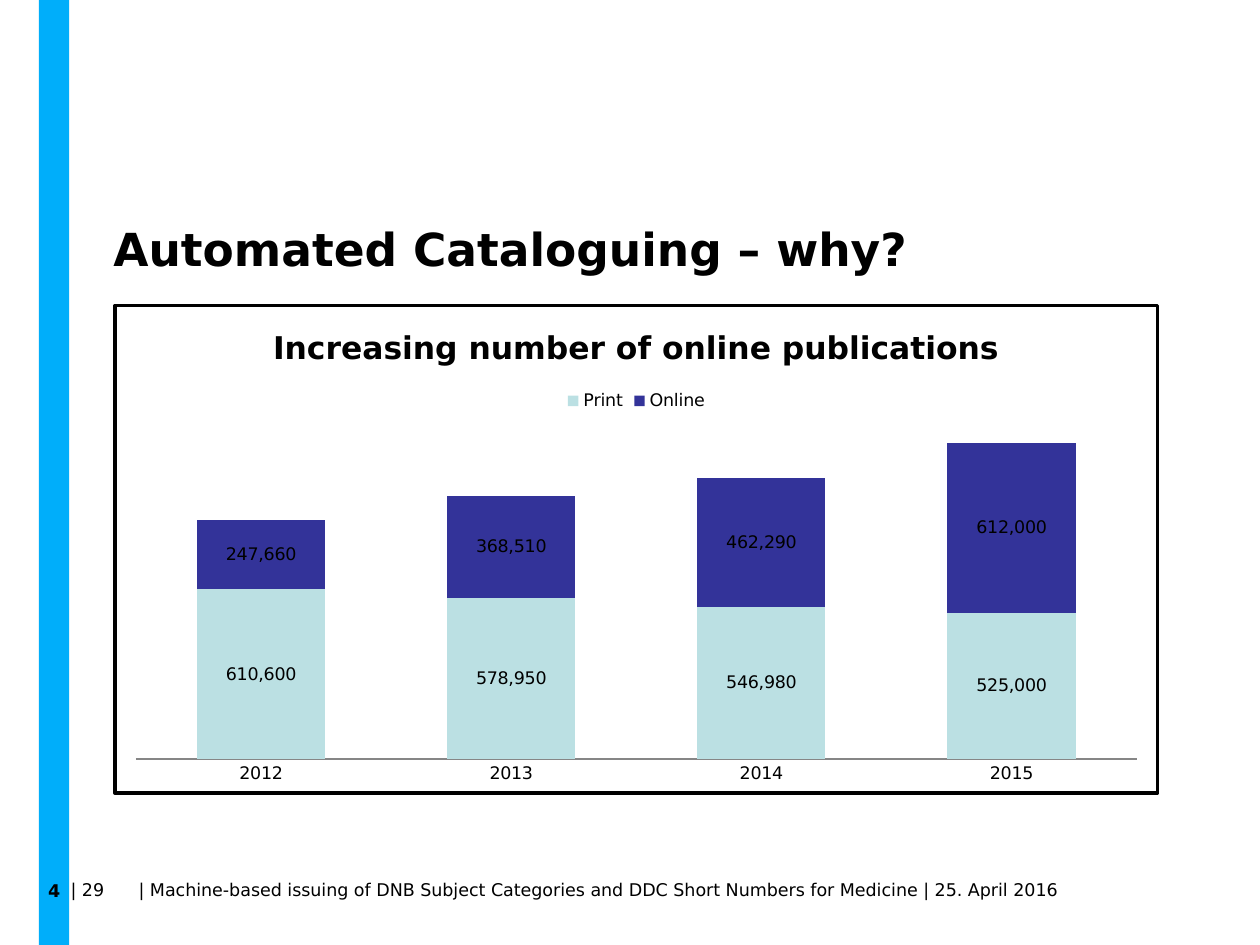
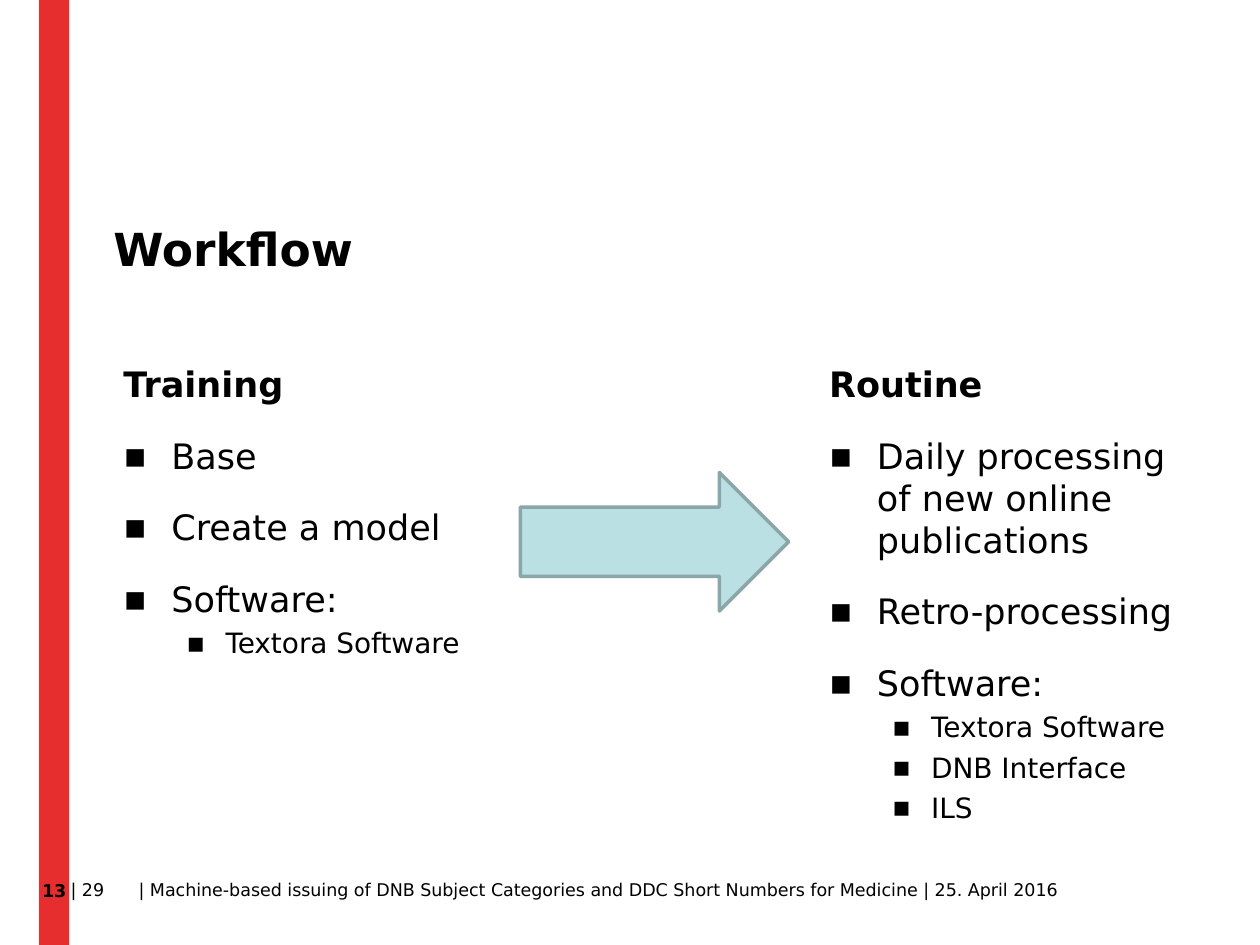
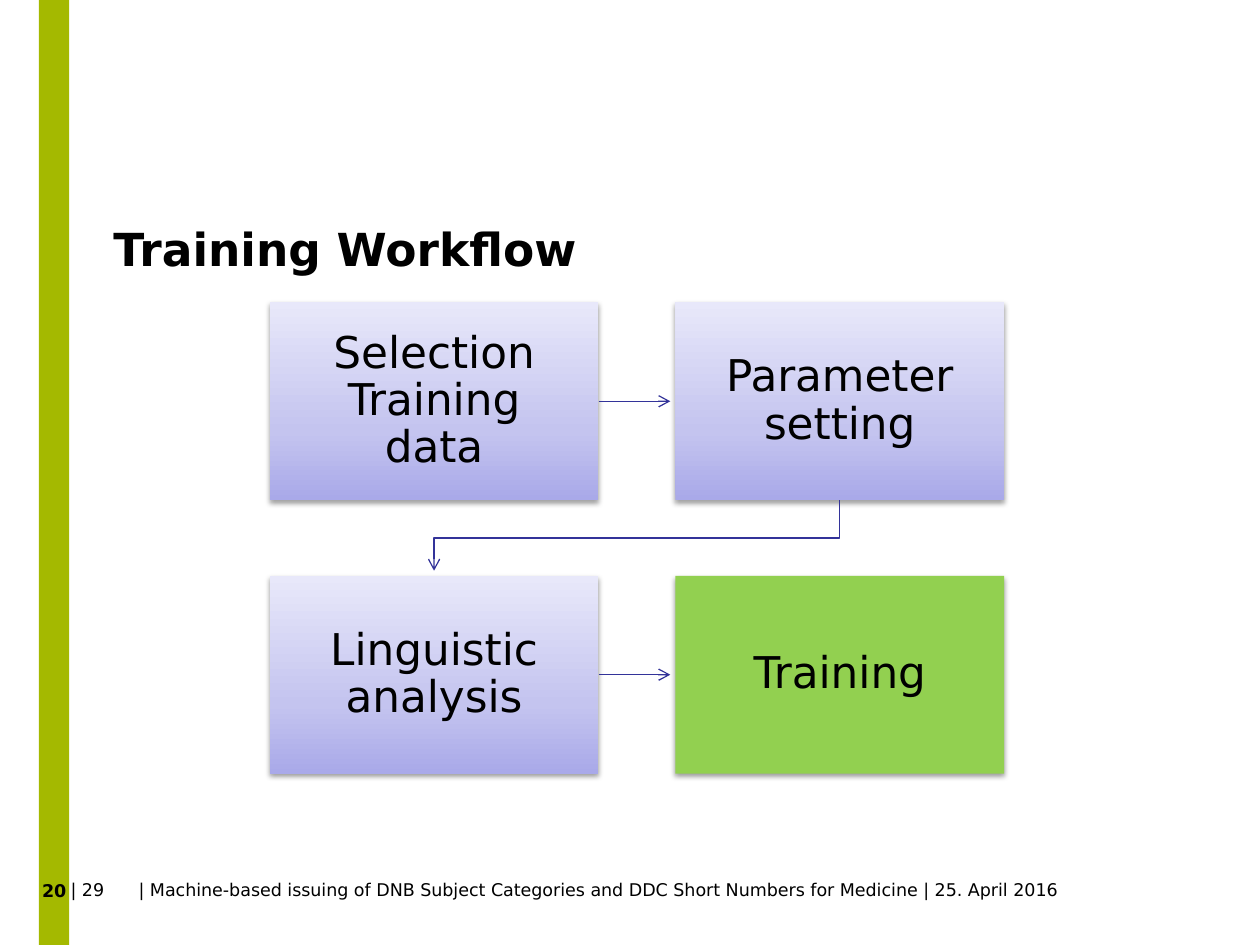
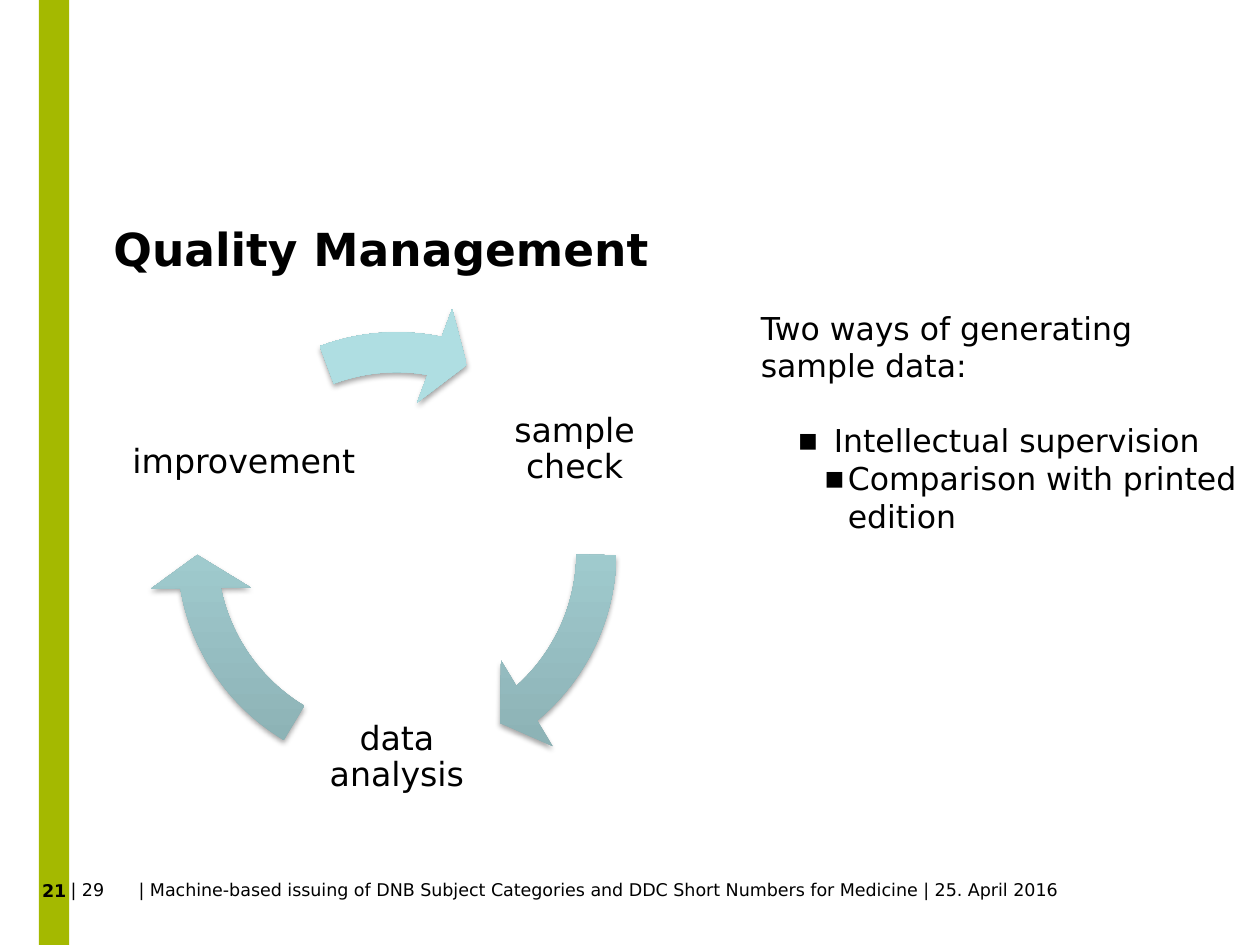
from dataclasses import dataclass
from typing import Any, NamedTuple, Optional, Sequence

from lxml.etree import SubElement
from pptx import Presentation
from pptx.chart.data import CategoryChartData
from pptx.dml.color import RGBColor
from pptx.enum.chart import XL_CHART_TYPE as ChartType
from pptx.enum.chart import XL_LABEL_POSITION as LabelPosition
from pptx.enum.chart import XL_LEGEND_POSITION as LegendPosition
from pptx.enum.chart import XL_TICK_MARK as TickMark
from pptx.enum.shapes import MSO_CONNECTOR as Connector
from pptx.enum.shapes import MSO_SHAPE as Preset
from pptx.enum.text import MSO_ANCHOR as Anchor
from pptx.enum.text import PP_ALIGN as Align
from pptx.oxml import parse_xml
from pptx.oxml.ns import nsdecls, qn
from pptx.util import Inches, Pt


@dataclass(frozen=True)
class Theme:
    font: str = "DejaVu Sans"
    ink: str = "000000"
    aqua: str = "BBE0E3"
    aqua_edge: str = "8AA6A8"
    indigo: str = "333399"
    axis: str = "868686"
    goal: str = "92D050"
    intro_band: str = "00AEFA"
    workflow_band: str = "E62E2E"
    training_band: str = "A4B900"
    step_stops: tuple = ((0, "A9A9E9"), (35, "C4C4EF"), (100, "E8E8FA"))
    cycle_stops: tuple = ((0, "87ABAE"), (80, "AFDEE2"), (100, "AFE0E4"))
    small: float = 10
    sub: float = 16
    note: float = 18
    cycle: float = 19
    body: float = 20
    step: float = 25
    title: float = 26


THEME = Theme()
PAGE_TOTAL = 29
FOOTER = "Machine-based issuing of DNB Subject Categories and DDC Short Numbers for Medicine | 25. April 2016"


class Area(NamedTuple):
    left: float
    top: float
    width: float
    height: float

    def lengths(self) -> list:
        return [Inches(value) for value in self]


class Style(NamedTuple):
    size: float
    bold: bool = False
    align: Align = Align.LEFT
    spacing: Any = None
    before: Optional[float] = None
    level: int = 0
    margin: float = 0
    hang: float = 0
    bullet: Optional[str] = None
    tab: Optional[float] = None


class Line(NamedTuple):
    text: str
    style: Style


class Shadow(NamedTuple):
    opacity: int
    blur: float
    distance: float


class CycleLabel(NamedTuple):
    text: str
    area: Area


class CycleArrow(NamedTuple):
    end: float
    start: float


HEADING = Style(THEME.title, bold=True, spacing=Pt(30))
PAGE_NUMBER = Style(THEME.small, bold=True, align=Align.CENTER)
FOOTER_STYLE = Style(THEME.small, tab=0.54)
COLUMN_HEAD = Style(THEME.body, bold=True, spacing=Pt(24))
ITEM = Style(THEME.body, spacing=Pt(24), before=16.8, margin=0.38, hang=0.38, bullet="▪")
SUB_ITEM = Style(THEME.sub, spacing=Pt(20), before=3, level=1, margin=0.81, hang=0.31, bullet="▪")
STEP = Style(THEME.step, align=Align.CENTER, spacing=0.9)
CYCLE = Style(THEME.cycle, align=Align.CENTER, spacing=0.9)
NOTE = Style(THEME.note)
FIRST_NOTE = Style(THEME.note, before=21, level=1, margin=0.58, hang=0.29, bullet="▪")
NEXT_NOTE = Style(THEME.note, level=1, margin=0.69, hang=0.19, bullet="▪")

STEP_SHADOW = Shadow(38, 3.1, 1.6)
CYCLE_SHADOW = Shadow(35, 3.1, 1.8)


def color(value: str) -> RGBColor:
    return RGBColor.from_string(value)


def assign(target: Any, values: dict) -> None:
    for name, value in values.items():
        setattr(target, name, value)


def set_font(font: Any, size: float, bold: bool = False) -> None:
    assign(font, {"name": THEME.font, "size": Pt(size), "bold": bold})
    font.color.rgb = color(THEME.ink)


def write(shape: Any, lines: Sequence[Line], inset: Sequence[float] = (0, 0, 0, 0),
          anchor: Anchor = Anchor.TOP, wrap: bool = True) -> None:
    frame = shape.text_frame
    sides = ("margin_left", "margin_top", "margin_right", "margin_bottom")
    assign(frame, dict(zip(sides, map(Inches, inset))))
    assign(frame, {"word_wrap": wrap, "vertical_anchor": anchor})
    for index, (text, style) in enumerate(lines):
        para = frame.paragraphs[0] if index == 0 else frame.add_paragraph()
        properties = para._p.get_or_add_pPr()
        if style.bullet:
            properties.set("marL", str(Inches(style.margin)))
            properties.set("indent", str(-Inches(style.hang)))
            SubElement(properties, qn("a:buFont"), typeface=THEME.font)
            SubElement(properties, qn("a:buChar"), char=style.bullet)
        if style.tab:
            stops = SubElement(properties, qn("a:tabLst"))
            SubElement(stops, qn("a:tab"), pos=str(Inches(style.tab)), algn="l")
        assign(para, {"alignment": style.align, "level": style.level})
        if style.spacing:
            para.line_spacing = style.spacing
        if style.before:
            para.space_before = Pt(style.before)
        span = para.add_run()
        span.text = text
        set_font(span.font, style.size, style.bold)


def add_text(page: Any, area: Area, lines: Sequence[Line], **options: Any) -> None:
    write(page.shapes.add_textbox(*area.lengths()), lines, **options)


def add_preset(page: Any, preset: Preset, area: Area, fill: Any,
               shadow: Optional[Shadow] = None) -> Any:
    shape = page.shapes.add_shape(preset, *area.lengths())
    shape.line.fill.background()
    shape.shadow.inherit = False
    if isinstance(fill, str):
        shape.fill.solid()
        shape.fill.fore_color.rgb = color(fill)
    else:
        shape.fill.gradient()
        shape.fill.gradient_angle = 90
        stops = shape.element.spPr.find(qn("a:gradFill")).find(qn("a:gsLst"))
        stops[:] = []
        for position, tone in fill:
            stop = SubElement(stops, qn("a:gs"), pos=str(position * 1000))
            SubElement(stop, qn("a:srgbClr"), val=tone)
    if shadow:
        effects = shape.element.spPr.find(qn("a:effectLst"))
        outer = SubElement(effects, qn("a:outerShdw"), blurRad=str(Pt(shadow.blur)),
                           dist=str(Pt(shadow.distance)), dir="5400000", rotWithShape="0")
        tone = SubElement(outer, qn("a:srgbClr"), val=THEME.ink)
        SubElement(tone, qn("a:alpha"), val=str(shadow.opacity * 1000))
    return shape


def add_arrow(page: Any, points: Sequence[tuple]) -> None:
    corners = [(Inches(x), Inches(y)) for x, y in points]
    if len(corners) == 2:
        arrow = page.shapes.add_connector(Connector.STRAIGHT, *corners[0], *corners[1])
    else:
        builder = page.shapes.build_freeform(*corners[0])
        builder.add_line_segments(corners[1:], close=False)
        arrow = builder.convert_to_shape()
        arrow.fill.background()
    arrow.line.color.rgb = color(THEME.indigo)
    arrow.line.width = Pt(0.75)
    SubElement(arrow.line._get_or_add_ln(), qn("a:tailEnd"), type="arrow")
    SubElement(arrow.element.spPr, qn("a:effectLst"))


def add_page(deck: Any, number: int, title: str, band: str) -> Any:
    page = deck.slides.add_slide(deck.slide_layouts[6])
    add_text(page, Area(0.56, 6.98, 8.61, 0.17),
             [Line(f"| {PAGE_TOTAL}\t| {FOOTER}", FOOTER_STYLE)])
    bar = add_preset(page, Preset.RECTANGLE, Area(0.31, 0, 0.24, 7.5), band)
    write(bar, [Line(str(number), PAGE_NUMBER)], inset=(0, 0.05, 0, 0.35),
          anchor=Anchor.BOTTOM, wrap=False)
    add_text(page, Area(0.9, 1.77, 8.3, 0.85), [Line(title, HEADING)])
    return page


def build_publications(deck: Any) -> None:
    page = add_page(deck, 4, "Automated Cataloguing – why?", THEME.intro_band)
    data = CategoryChartData(number_format="#,##0")
    data.categories = ["2012", "2013", "2014", "2015"]
    data.add_series("Print", [610600, 578950, 546980, 525000])
    data.add_series("Online", [247660, 368510, 462290, 612000])
    area = Area(0.9, 2.41, 8.3, 3.9)
    chart = page.shapes.add_chart(ChartType.COLUMN_STACKED, *area.lengths(), data).chart
    set_font(chart.font, THEME.small)

    heading = chart.chart_title.text_frame.paragraphs[0].add_run()
    heading.text = "Increasing number of online publications"
    set_font(heading.font, THEME.note, bold=True)
    chart.has_legend = True
    assign(chart.legend, {"position": LegendPosition.TOP, "include_in_layout": False})

    assign(chart.value_axis, {"visible": False, "has_major_gridlines": False,
                              "minimum_scale": 0, "maximum_scale": 1200000})
    assign(chart.category_axis, {"major_tick_mark": TickMark.NONE, "minor_tick_mark": TickMark.NONE})
    chart.category_axis.format.line.color.rgb = color(THEME.axis)

    plot = chart.plots[0]
    assign(plot, {"gap_width": 95, "overlap": 100, "vary_by_categories": False,
                  "has_data_labels": True})
    assign(plot.data_labels, {"show_value": True, "number_format": "#,##0",
                              "number_format_is_linked": False, "position": LabelPosition.CENTER})
    set_font(plot.data_labels.font, THEME.small)
    for series, tone in zip(plot.series, (THEME.aqua, THEME.indigo)):
        series.format.fill.solid()
        series.format.fill.fore_color.rgb = color(tone)

    border = parse_xml(
        f'<c:spPr {nsdecls("c", "a")}><a:noFill/><a:ln w="{Pt(2)}"><a:solidFill>'
        f'<a:srgbClr val="{THEME.ink}"/></a:solidFill></a:ln></c:spPr>')
    chart.element.find(qn("c:chart")).addnext(border)


def build_workflow(deck: Any) -> None:
    page = add_page(deck, 13, "Workflow", THEME.workflow_band)
    columns = [
        (0.98, "Training", ["Base", "Create a model", "Software:"], ["Textora Software"]),
        (6.58, "Routine",
         ["Daily processing of new online publications", "Retro-processing", "Software:"],
         ["Textora Software", "DNB Interface", "ILS"]),
    ]
    for left, head, items, programs in columns:
        lines = [Line(head, COLUMN_HEAD)]
        lines += [Line(item, ITEM) for item in items]
        lines += [Line(program, SUB_ITEM) for program in programs]
        add_text(page, Area(left, 2.88, 2.91, 3.65), lines)
    arrow = add_preset(page, Preset.RIGHT_ARROW, Area(4.13, 3.75, 2.13, 1.1), THEME.aqua)
    arrow.line.color.rgb = color(THEME.aqua_edge)
    arrow.line.width = Pt(2)


def build_training(deck: Any) -> None:
    page = add_page(deck, 20, "Training Workflow", THEME.training_band)
    left, top, width, height = 2.14, 2.4, 2.61, 1.57
    column_step, row_step, arrow_gap = 3.22, 2.17, 0.04
    steps = ["Selection Training data", "Parameter setting", "Linguistic analysis", "Training"]
    for index, text in enumerate(steps):
        row, column = divmod(index, 2)
        area = Area(left + column * column_step, top + row * row_step, width, height)
        fill = THEME.goal if index == len(steps) - 1 else THEME.step_stops
        box = add_preset(page, Preset.RECTANGLE, area, fill, STEP_SHADOW)
        write(box, [Line(text, STEP)], inset=[0.19] * 4, anchor=Anchor.MIDDLE)
    for row in range(2):
        middle = top + row * row_step + height / 2
        add_arrow(page, [(left + width, middle), (left + column_step - arrow_gap, middle)])
    target = left + width / 2
    source = target + column_step
    bottom, turn = top + height, top + (height + row_step) / 2
    add_arrow(page, [(source, bottom), (source, turn), (target, turn),
                     (target, top + row_step - arrow_gap)])


def build_quality(deck: Any) -> None:
    page = add_page(deck, 21, "Quality Management", THEME.training_band)
    labels = [
        CycleLabel("sample check", Area(3.72, 2.73, 1.68, 1.68)),
        CycleLabel("data analysis", Area(2.31, 5.17, 1.68, 1.68)),
        CycleLabel("improvement", Area(0.91, 3.2, 2.05, 0.94)),
    ]
    arrows = [CycleArrow(29.62, 0.53), CycleArrow(101.71, 72.61), CycleArrow(168.55, 149.68)]
    for label, turn in zip(labels, arrows):
        add_text(page, label.area, [Line(label.text, CYCLE)], inset=[0.03] * 4,
                 anchor=Anchor.MIDDLE)
        arrow = add_preset(page, Preset.CIRCULAR_ARROW, Area(1.17, 2.4, 3.96, 3.96),
                           THEME.cycle_stops, CYCLE_SHADOW)
        for index, value in enumerate((0.08, 5.76, turn.end, turn.start, 0.1)):
            arrow.adjustments[index] = value
    add_text(page, Area(5.94, 2.4, 4.06, 2.22), [
        Line("Two ways of generating sample data:", NOTE),
        Line("Intellectual supervision", FIRST_NOTE),
        Line("Comparison with printed edition", NEXT_NOTE),
    ], inset=(0.1, 0.05, 0.1, 0.05))


def main() -> None:
    deck = Presentation()
    assign(deck, {"slide_width": Inches(10), "slide_height": Inches(7.5)})
    for build in (build_publications, build_workflow, build_training, build_quality):
        build(deck)
    deck.save("out.pptx")


if __name__ == "__main__":
    main()
